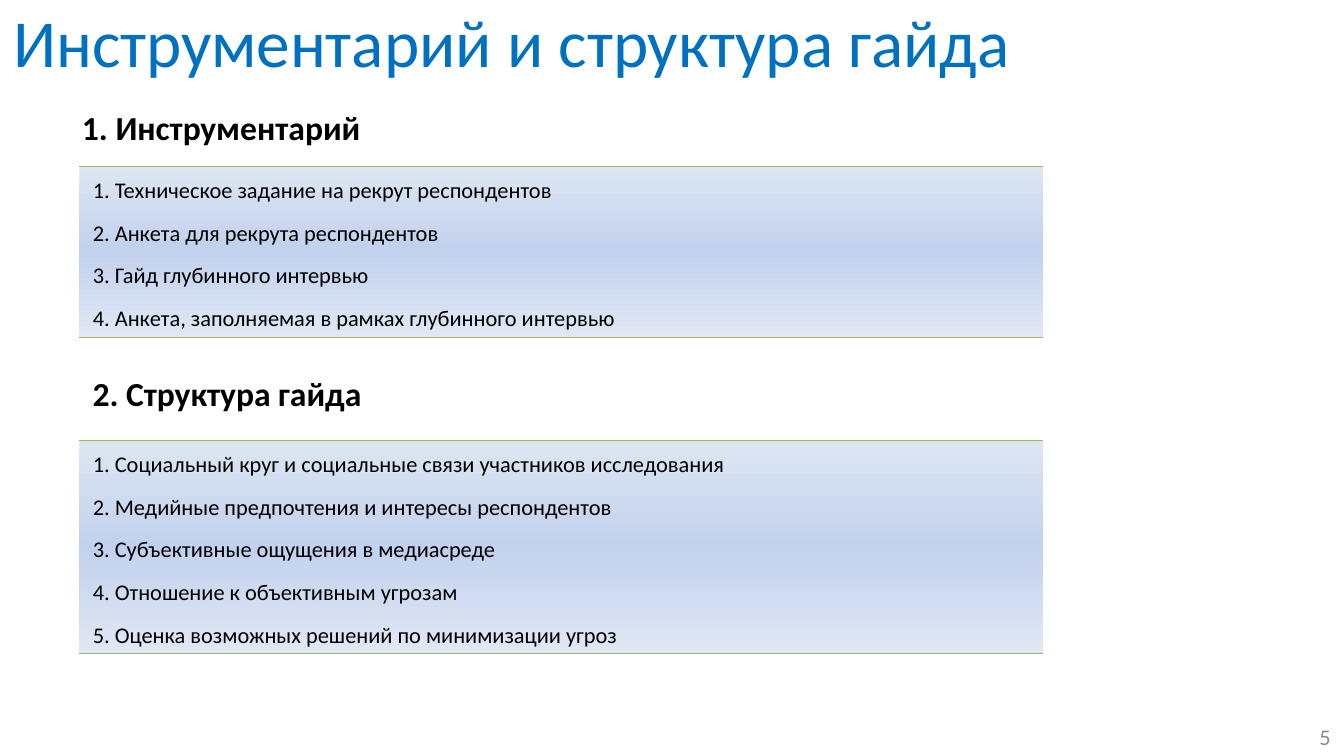
"""Builds the slide on research tools and the interview guide structure."""
from lxml.etree import SubElement
from pptx import Presentation
from pptx.dml.color import RGBColor
from pptx.enum.text import MSO_ANCHOR as Anchor, PP_ALIGN as Align
from pptx.oxml import parse_xml
from pptx.oxml.ns import nsdecls, qn
from pptx.util import Cm, Pt

TITLE = "Инструментарий и структура гайда"
PAGE_NUMBER = "5"
SECTIONS = [
    {
        "heading": "1. Инструментарий",
        "heading_at": (1.3, 1.9),
        "top": 3.15,
        "items": [
            "1. Техническое задание на рекрут респондентов",
            "2. Анкета для рекрута респондентов",
            "3. Гайд глубинного интервью",
            "4. Анкета, заполняемая в рамках глубинного интервью",
        ],
    },
    {
        "heading": "2. Структура гайда",
        "heading_at": (1.5, 6.93),
        "top": 8.33,
        "items": [
            "1. Социальный круг и социальные связи участников исследования",
            "2. Медийные предпочтения и интересы респондентов",
            "3. Субъективные ощущения в медиасреде",
            "4. Отношение к объективным угрозам",
            "5. Оценка возможных решений по минимизации угроз",
        ],
    },
]

THEME = {
    "font": "Calibri",
    "title": {"size": 36, "color": "0070C0", "bold": False},
    "heading": {"size": 18, "color": "000000", "bold": True},
    "item": {"size": 12, "color": "000000", "bold": False},
    "page": {"size": 12, "color": "8C8C8C", "bold": False},
    "rule": "9BBB59",
    "gradient": [(0, "DCE6F2"), (50, "C2D1ED"), (100, "E1E8F5")],
    "table_style": "{2D5ABB26-0587-4C30-8999-92F81FD0307C}",
}
LIST_LEFT, LIST_WIDTH, ITEM_HEIGHT = 1.5, 18.21, 0.8
HEADING_SIZE = (23.01, 1.02)
ITEM_FORMAT = {"alignment": Align.JUSTIFY, "line_spacing": 1.15, "space_after": Pt(6)}


def write(paragraph, text, role, hanging=0, **formats):
    look = THEME[role]
    run = paragraph.add_run()
    run.text = text
    run.font.color.rgb = RGBColor.from_string(look["color"])
    for name, value in {
        "name": THEME["font"], "size": Pt(look["size"]), "bold": look["bold"],
    }.items():
        setattr(run.font, name, value)
    for name, value in formats.items():
        setattr(paragraph, name, value)
    if hanging:
        properties = paragraph._p.get_or_add_pPr()
        properties.set("marL", str(Cm(hanging)))
        properties.set("indent", str(-Cm(hanging)))


def add_text(slide, box, text, role, anchor=Anchor.TOP, **formats):
    frame = slide.shapes.add_textbox(*map(Cm, box)).text_frame
    frame.word_wrap = True
    frame.vertical_anchor = anchor
    write(frame.paragraphs[0], text, role, **formats)


def style_cell(cell):
    properties = cell._tc.get_or_add_tcPr()
    for side in ("lnT", "lnB"):
        properties.append(parse_xml(
            f'<a:{side} {nsdecls("a")} w="{Pt(1)}"><a:solidFill>'
            f'<a:srgbClr val="{THEME["rule"]}"/></a:solidFill></a:{side}>'
        ))
    gradient = SubElement(properties, qn("a:gradFill"), rotWithShape="1")
    stops = SubElement(gradient, qn("a:gsLst"))
    for position, color in THEME["gradient"]:
        stop = SubElement(stops, qn("a:gs"), pos=str(position * 1000))
        SubElement(stop, qn("a:srgbClr"), val=color)
    SubElement(gradient, qn("a:lin"), ang=str(90 * 60000), scaled="0")


def add_list(slide, top, items):
    box = (LIST_LEFT, top, LIST_WIDTH, ITEM_HEIGHT * len(items))
    table = slide.shapes.add_table(1, 1, *map(Cm, box)).table
    table.first_row = table.horz_banding = False
    table._tbl.tblPr.find(qn("a:tableStyleId")).text = THEME["table_style"]
    cell = table.cell(0, 0)
    style_cell(cell)
    frame = cell.text_frame
    for index, item in enumerate(items):
        paragraph = frame.add_paragraph() if index else frame.paragraphs[0]
        write(paragraph, item, "item", hanging=0.5, **ITEM_FORMAT)


def main():
    deck = Presentation()
    deck.slide_width, deck.slide_height = Cm(25.4), Cm(14.29)
    slide = deck.slides.add_slide(deck.slide_layouts[6])
    add_text(slide, (0, -0.05, 22.86, 1.65), TITLE, "title", Anchor.MIDDLE)
    add_text(slide, (19.48, 13.54, 5.92, 0.76), PAGE_NUMBER, "page",
             Anchor.MIDDLE, alignment=Align.RIGHT)
    for section in SECTIONS:
        add_text(slide, section["heading_at"] + HEADING_SIZE, section["heading"],
                 "heading", hanging=1, alignment=Align.JUSTIFY)
        add_list(slide, section["top"], section["items"])
    deck.save("out.pptx")


if __name__ == "__main__":
    main()
